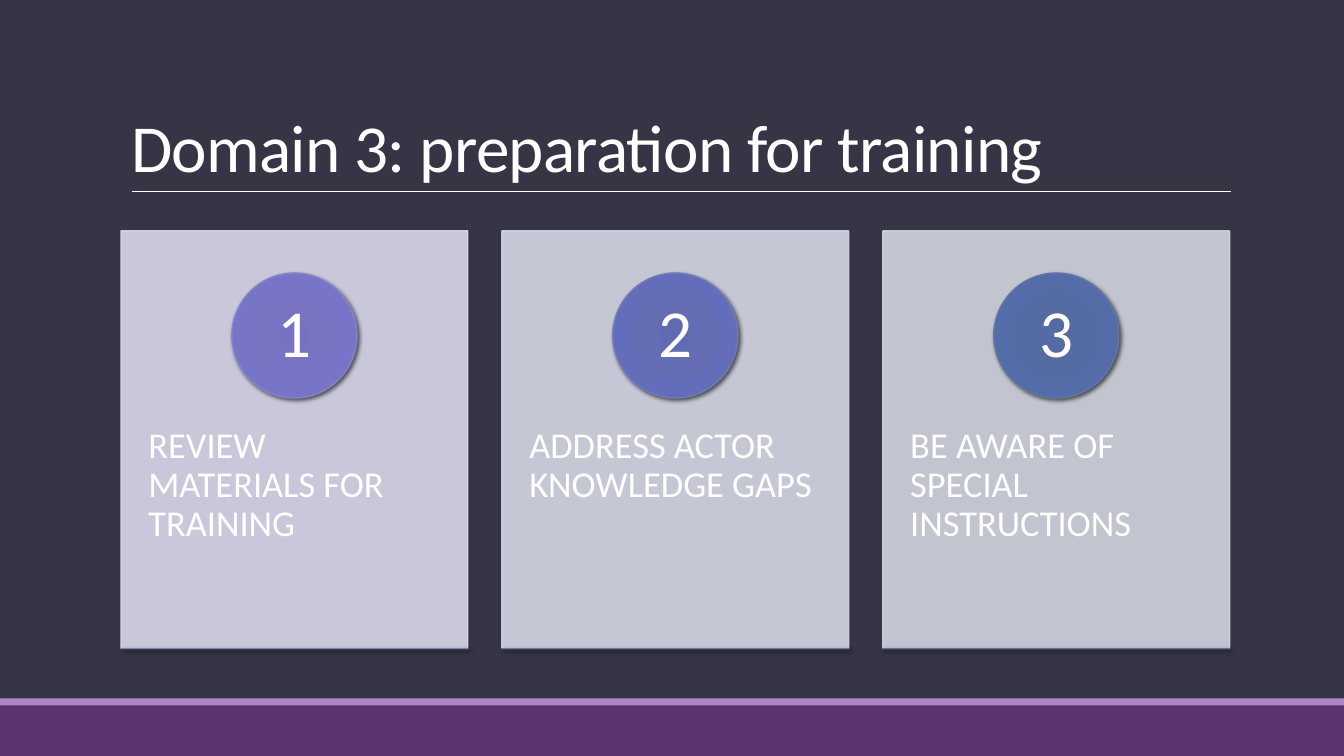
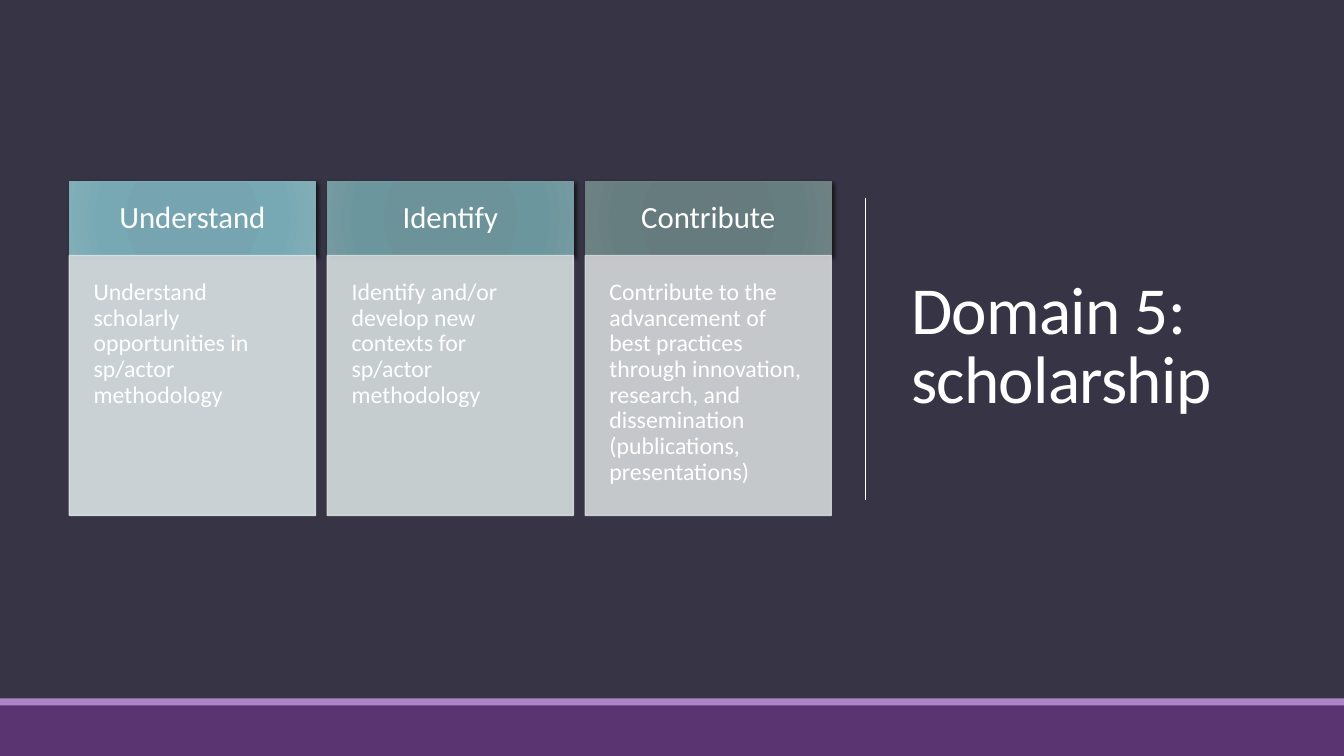
from pptx import Presentation
from pptx.dml.color import RGBColor
from pptx.enum.shapes import MSO_CONNECTOR, MSO_SHAPE
from pptx.enum.text import MSO_ANCHOR, MSO_AUTO_SIZE, PP_ALIGN
from pptx.oxml import parse_xml
from pptx.oxml.ns import nsdecls, qn
from pptx.util import Cm, Pt

RECT, OVAL = MSO_SHAPE.RECTANGLE, MSO_SHAPE.OVAL
TOP, MIDDLE, BOTTOM = MSO_ANCHOR.TOP, MSO_ANCHOR.MIDDLE, MSO_ANCHOR.BOTTOM
LEFT, CENTER = PP_ALIGN.LEFT, PP_ALIGN.CENTER

# Shared look
WIDTH, HEIGHT = 33.87, 19.05
BACKGROUND, WHITE = "373545", "FFFFFF"
BANDS = [(17.6, 0.18, "AD84C6"), (17.78, 1.27, "5A3471")]  # top, height, colour
GRADIENT_STOPS = (0, 34, 70, 100)
FONT = {"name": "Calibri"}
TITLE_FONT = {**FONT, "size": Pt(48)}
SHADOW = (
    f'<a:outerShdw {nsdecls("a")} blurRad="38100" dist="25400" dir="2700000" rotWithShape="0">'
    '<a:srgbClr val="000000"><a:alpha val="60000"/></a:srgbClr></a:outerShdw>'
)


def color(hex_code):
    return RGBColor.from_string(hex_code)


def add_block(slide, kind, box, fills, outline=None, opacity=100, text="",
              size=18, align=LEFT, anchor=TOP, insets=(0, 0, 0, 0)):
    """Add a shape; several fills make a radial gradient with a shadow."""
    block = slide.shapes.add_shape(kind, *map(Cm, box))
    block.shadow.inherit = False
    properties = block._element.spPr
    block.fill.solid()
    block.fill.fore_color.rgb = color(fills[0])
    if outline:
        block.line.color.rgb = color(outline)
        block.line.width = Pt(1)
    else:
        block.line.fill.background()
    if opacity < 100:
        for paint in properties.iter(qn("a:srgbClr")):
            paint.append(parse_xml(f'<a:alpha {nsdecls("a")} val="{opacity * 1000}"/>'))
    if len(fills) > 1:
        stops = "".join(
            f'<a:gs pos="{position * 1000}"><a:srgbClr val="{fill}"/></a:gs>'
            for position, fill in zip(GRADIENT_STOPS, fills))
        gradient = parse_xml(
            f'<a:gradFill {nsdecls("a")} rotWithShape="1"><a:gsLst>{stops}</a:gsLst>'
            '<a:path path="circle"><a:fillToRect l="100000" t="100000" r="100000" b="100000"/>'
            '</a:path></a:gradFill>')
        properties.replace(properties.find(qn("a:solidFill")), gradient)
        properties.find(qn("a:effectLst")).append(parse_xml(SHADOW))
    if text:
        frame = block.text_frame
        frame_format = dict(zip(
            ("margin_left", "margin_top", "margin_right", "margin_bottom"), map(Cm, insets)))
        frame_format.update(word_wrap=True, vertical_anchor=anchor)
        for name, value in frame_format.items():
            setattr(frame, name, value)
        paragraph = frame.paragraphs[0]
        paragraph.text = text
        paragraph.alignment = align
        paragraph.line_spacing = 0.9
        for name, value in {**FONT, "size": Pt(size)}.items():
            setattr(paragraph.font, name, value)
        paragraph.font.color.rgb = color(WHITE)
    return block


prs = Presentation()
prs.slide_width, prs.slide_height = Cm(WIDTH), Cm(HEIGHT)
master_fill = prs.slide_master.background.fill
master_fill.solid()
master_fill.fore_color.rgb = color(BACKGROUND)

# Bands, title and thin rule of each slide
outlines = [
    ("Domain 3: preparation for training", (3.05, 0.79, 27.94, 4.04), BOTTOM,
     (3.33, 4.83, 31.01, 4.83)),
    ("Domain 5: scholarship", (22.71, 1.75, 9.37, 14.05), MIDDLE,
     (21.82, 4.98, 21.82, 12.6)),
]
slides = []
for heading, title_box, title_anchor, rule_ends in outlines:
    slide = prs.slides.add_slide(prs.slide_layouts[5])
    slides.append(slide)
    for band_top, band_height, band_color in BANDS:
        add_block(slide, RECT, (0, band_top, WIDTH, band_height), [band_color])

    title = slide.shapes.title
    for name, value in zip(("left", "top", "width", "height"), map(Cm, title_box)):
        setattr(title, name, value)
    title_frame = title.text_frame
    title_frame.text = heading
    title_frame.auto_size = MSO_AUTO_SIZE.NONE
    title_frame.word_wrap = True
    title_frame.vertical_anchor = title_anchor
    title_line = title_frame.paragraphs[0]
    title_line.alignment = LEFT
    title_line.line_spacing = 0.85
    title_run = title_line.runs[0]
    for name, value in TITLE_FONT.items():
        setattr(title_run.font, name, value)
    title_run.font.color.rgb = color(WHITE)
    title_run._r.get_or_add_rPr().set("spc", "-50")

    rule = slide.shapes.add_connector(MSO_CONNECTOR.STRAIGHT, *map(Cm, rule_ends))
    rule.line.color.rgb = color(WHITE)
    rule.line.width = Pt(0.5)
    rule._element.spPr.append(parse_xml(f'<a:effectLst {nsdecls("a")}/>'))

preparation, scholarship = slides

# Preparation: numbered cards with a circle and a base strip
CARD_LEFT, CARD_TOP, CARD_WIDTH, CARD_HEIGHT, CARD_PITCH = 3.05, 5.82, 8.74, 10.52, 9.6
CIRCLE_TOP, CIRCLE_SIZE = 6.88, 3.15
steps = [
    ("REVIEW MATERIALS FOR TRAINING", "D9D9EB",
     ["7572C3", "7874C3", "7874C8", "8481CA"], "8784C7",
     ["696CBC", "6C6FBC", "6C6FC0", "787AC3"], "7B7DBF"),
    ("ADDRESS ACTOR KNOWLEDGE GAPS", "D5D7E5",
     ["616BB4", "646DB4", "636DB9", "6F78BB"], "727AB7",
     ["596AAC", "5C6CAC", "5C6CB0", "6776B2"], "6A78AE"),
    ("BE AWARE OF SPECIAL INSTRUCTIONS", "D2D5DE",
     ["5269A4", "556BA4", "546CA8", "5F74A9"], "6275A5",
     ["4E6998", "506A98", "506B9C", "5A729D"], "5D739A"),
]
for index, (step, card_color, circle_fills, circle_edge, strip_fills, strip_edge) in enumerate(steps):
    left = CARD_LEFT + index * CARD_PITCH
    add_block(preparation, RECT, (left, CARD_TOP, CARD_WIDTH, CARD_HEIGHT), [card_color],
              card_color, opacity=90, text=step, size=26, insets=(0.69, 4.93, 0.69, 0.91))
    add_block(preparation, OVAL,
              (left + (CARD_WIDTH - CIRCLE_SIZE) / 2, CIRCLE_TOP, CIRCLE_SIZE, CIRCLE_SIZE),
              circle_fills, circle_edge, text=str(index + 1), size=48,
              align=CENTER, anchor=MIDDLE, insets=(0.25, 0.03, 0.25, 0.03))
    add_block(preparation, RECT, (left, CARD_TOP + CARD_HEIGHT, CARD_WIDTH, 0.01),
              strip_fills, strip_edge)

# Scholarship: columns with a header above a description
COLUMN_LEFT, COLUMN_TOP, COLUMN_WIDTH, COLUMN_PITCH = 1.75, 4.57, 6.2, 6.5
HEADER_HEIGHT, BODY_HEIGHT = 1.87, 6.55
goals = [
    ("Understand", "Understand scholarly opportunities in sp/actor methodology",
     ["74A4B1", "76A5B1", "77A9B5", "82AEB8"], "84ACB6", "D9E3E5"),
    ("Identify", "Identify and/or develop new contexts for sp/actor methodology",
     ["6A9299", "6C939A", "6C969D", "759AA1"], "77999F", "D6DEDF"),
    ("Contribute", "Contribute to the advancement of best practices through innovation, "
     "research, and dissemination (publications, presentations)",
     ["657A7D", "667B7E", "677E80", "6E8284"], "6F8183", "D5D8D9"),
]
for index, (goal, description, header_fills, header_edge, body_color) in enumerate(goals):
    left = COLUMN_LEFT + index * COLUMN_PITCH
    add_block(scholarship, RECT, (left, COLUMN_TOP, COLUMN_WIDTH, HEADER_HEIGHT),
              header_fills, header_edge, text=goal, size=22,
              align=CENTER, anchor=MIDDLE, insets=(0.48,) * 4)
    add_block(scholarship, RECT, (left, COLUMN_TOP + HEADER_HEIGHT, COLUMN_WIDTH, BODY_HEIGHT),
              [body_color], body_color, opacity=90, text=description, size=17,
              insets=(0.61,) * 4)

prs.save("out.pptx")
